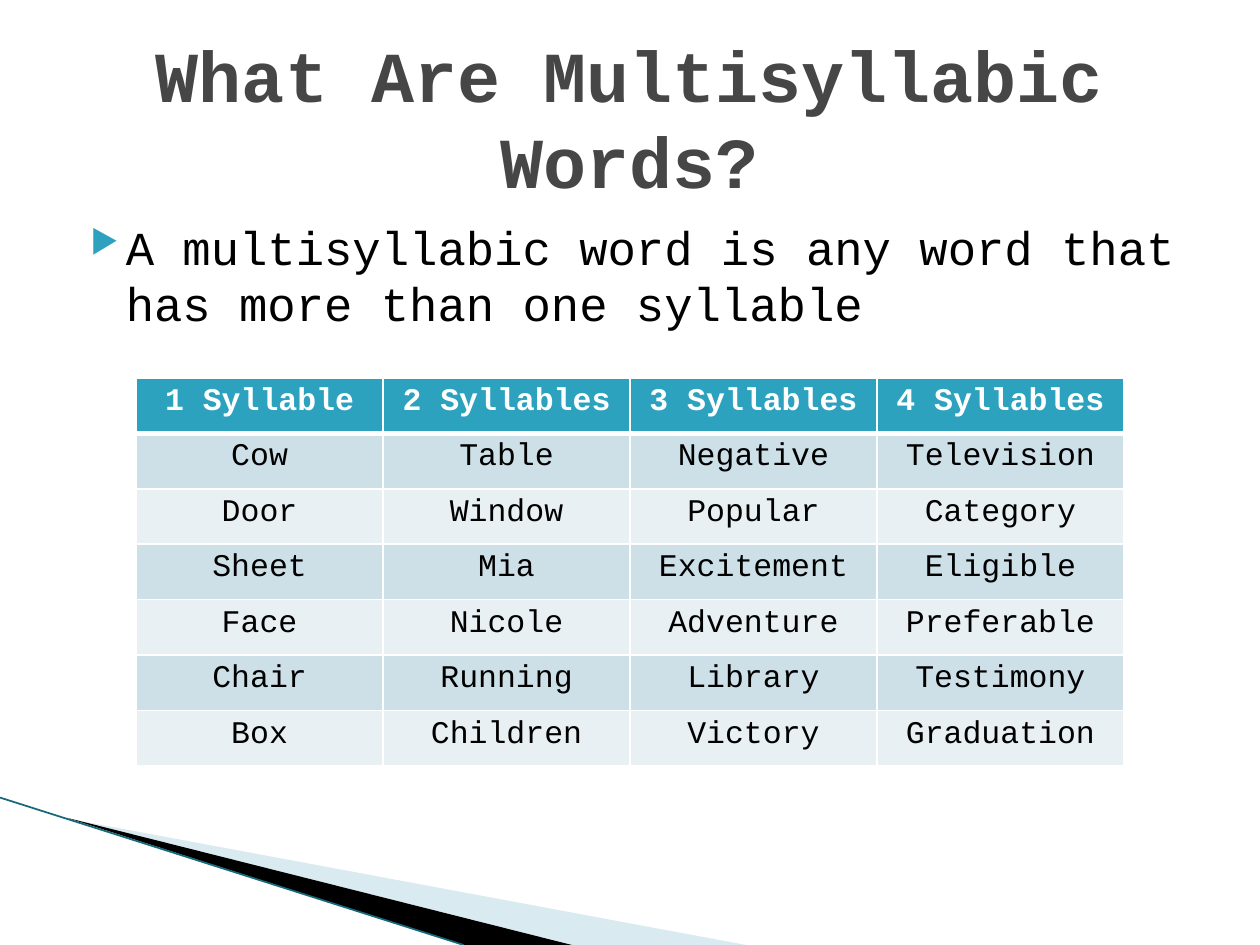
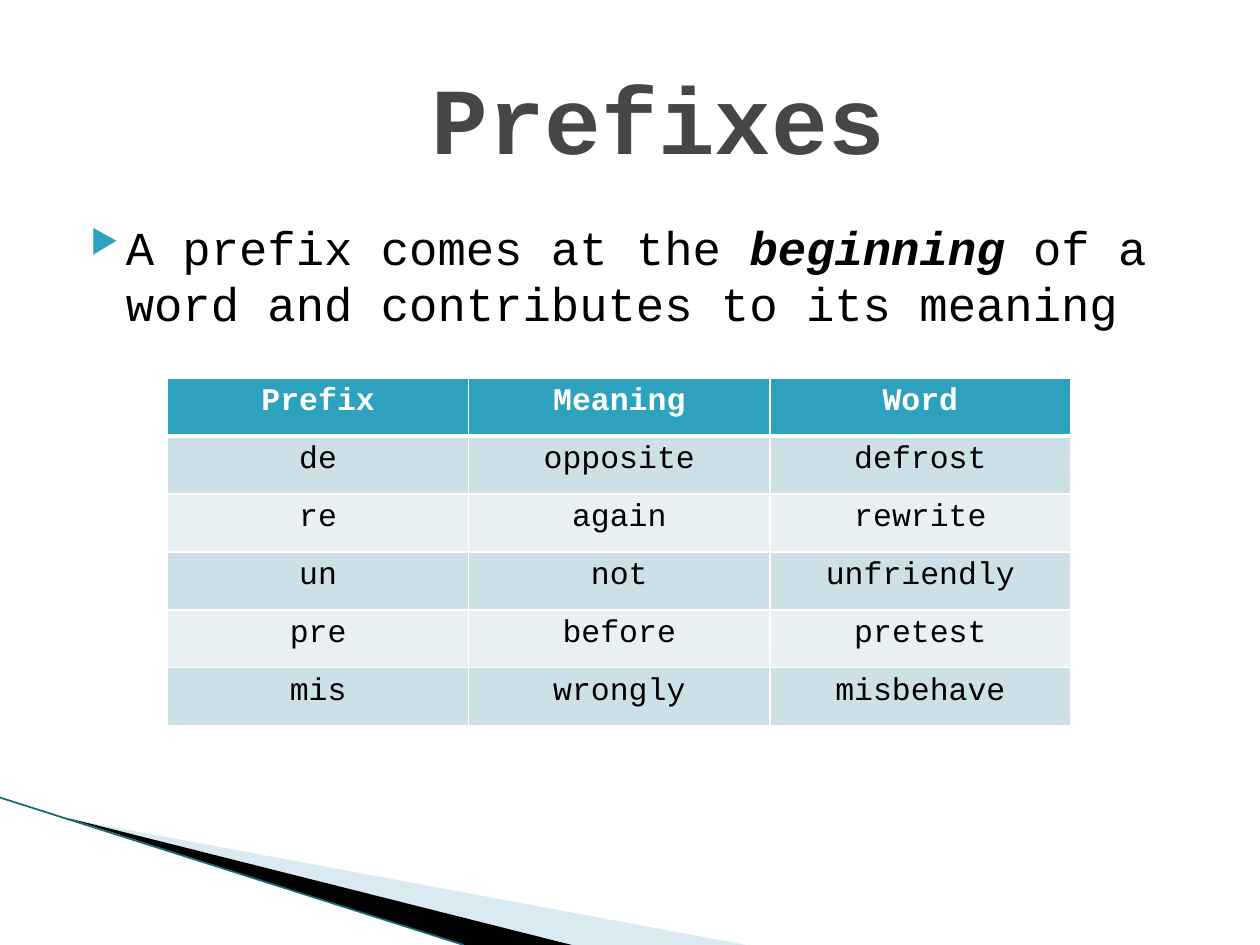
from lxml.etree import SubElement
from pptx import Presentation
from pptx.dml.color import RGBColor as Rgb
from pptx.enum.shapes import MSO_CONNECTOR as Connector
from pptx.enum.text import MSO_ANCHOR as Anchor, MSO_AUTO_SIZE as AutoSize, PP_ALIGN as Align
from pptx.oxml.ns import qn
from pptx.util import Inches, Pt

FONT = "Courier New"
COLORS = {
    "title": "464646",
    "text": "000000",
    "white": "FFFFFF",
    "accent": "2DA2BF",
    "odd_row": "CDE0E8",
    "even_row": "E8F0F4",
    "pale_wedge": "A0CBDC",
    "dark_wedge": "000000",
    "edge": "16697A",
}
TITLE_ONLY = 5
TABLE_TOP = 3

SYLLABLES = [
    ["1 Syllable", "2 Syllables", "3 Syllables", "4 Syllables"],
    ["Cow", "Table", "Negative", "Television"],
    ["Door", "Window", "Popular", "Category"],
    ["Sheet", "Mia", "Excitement", "Eligible"],
    ["Face", "Nicole", "Adventure", "Preferable"],
    ["Chair", "Running", "Library", "Testimony"],
    ["Box", "Children", "Victory", "Graduation"],
]
PREFIXES = [
    ["Prefix", "Meaning", "Word"],
    ["de", "opposite", "defrost"],
    ["re", "again", "rewrite"],
    ["un", "not", "unfriendly"],
    ["pre", "before", "pretest"],
    ["mis", "wrongly", "misbehave"],
]


def color(name):
    return Rgb.from_string(COLORS[name])


def add_text(para, text, size=18, ink="text", bold=False, italic=False, align=None):
    if align is not None:
        para.alignment = align
    span = para.add_run()
    span.text = text
    font = span.font
    font.name, font.size = FONT, Pt(size)
    font.bold, font.italic = bold, italic
    font.color.rgb = color(ink)


def add_wedge(page, points, ink, opacity=100):
    start, *rest = [(Inches(x), Inches(y)) for x, y in points]
    builder = page.shapes.build_freeform(*start)
    builder.add_line_segments(rest, close=True)
    wedge = builder.convert_to_shape()
    wedge.shadow.inherit = False
    wedge.line.fill.background()
    wedge.fill.solid()
    wedge.fill.fore_color.rgb = color(ink)
    if opacity < 100:
        fill_color = wedge.fill._xPr.find(".//" + qn("a:srgbClr"))
        SubElement(fill_color, qn("a:alpha"), val=str(opacity * 1000))


def add_corner_band(page):
    add_wedge(page, [(0.55, 6.5), (5.92, 7.5), (4.55, 7.5)], "pale_wedge", opacity=40)
    add_wedge(page, [(0.53, 6.49), (4.54, 7.5), (3.68, 7.5)], "dark_wedge")
    edge = page.shapes.add_connector(
        Connector.STRAIGHT, Inches(0), Inches(6.33), Inches(3.68), Inches(7.5)
    )
    edge.line.color.rgb = color("edge")
    edge.line.width = Pt(1)
    SubElement(edge._element.spPr, qn("a:effectLst"))


def add_title(page, text, size):
    title = page.shapes.title
    title.left, title.top = Inches(0.5), Inches(0.3)
    title.width, title.height = Inches(9), Inches(1.25)
    frame = title.text_frame
    frame.word_wrap = True
    frame.auto_size = AutoSize.NONE
    frame.vertical_anchor = Anchor.MIDDLE
    add_text(frame.paragraphs[0], text, size=size, ink="title", bold=True, align=Align.CENTER)


def add_bullet(para):
    props = para._p.get_or_add_pPr()
    props.set("marL", str(Inches(0.4)))
    props.set("indent", str(Inches(-0.28)))
    bullet_color = SubElement(props, qn("a:buClr"))
    SubElement(bullet_color, qn("a:srgbClr"), val=COLORS["accent"])
    SubElement(props, qn("a:buSzPct"), val="68000")
    SubElement(props, qn("a:buChar"), char="▶")


def add_definition(page, spans):
    box = page.shapes.add_textbox(Inches(0.5), Inches(1.68), Inches(9), Inches(1.1))
    box.text_frame.word_wrap = True
    para = box.text_frame.paragraphs[0]
    add_bullet(para)
    for text, strong in spans:
        add_text(para, text, size=27, bold=strong, italic=strong)


def set_borders(cell, **widths):
    props = cell._tc.get_or_add_tcPr()
    for side in "LRTB":
        width = Pt(widths.get(side, 1))
        border = SubElement(props, qn(f"a:ln{side}"), w=str(width))
        fill = SubElement(border, qn("a:solidFill"))
        SubElement(fill, qn("a:srgbClr"), val=COLORS["white"])


def format_cell(cell, text, row):
    header = row == 0
    if header:
        set_borders(cell, B=3)
        fill_name = "accent"
    else:
        set_borders(cell, T=3 if row == 1 else 1)
        fill_name = "odd_row" if row % 2 else "even_row"
    cell.fill.solid()
    cell.fill.fore_color.rgb = color(fill_name)
    add_text(
        cell.text_frame.paragraphs[0],
        text,
        ink="white" if header else "text",
        bold=header,
        align=Align.CENTER,
    )


def add_word_table(page, rows, left, column_width, row_height):
    row_count, column_count = len(rows), len(rows[0])
    table = page.shapes.add_table(
        row_count,
        column_count,
        Inches(left),
        Inches(TABLE_TOP),
        Inches(column_width * column_count),
        Inches(row_height * row_count),
    ).table
    for column in table.columns:
        column.width = Inches(column_width)
    for row, words in enumerate(rows):
        table.rows[row].height = Inches(row_height)
        for column, word in enumerate(words):
            format_cell(table.cell(row, column), word, row)


def add_page(deck, title, title_size, definition):
    page = deck.slides.add_slide(deck.slide_layouts[TITLE_ONLY])
    add_corner_band(page)
    add_title(page, title, title_size)
    add_definition(page, definition)
    return page


def main():
    deck = Presentation()
    deck.slide_width, deck.slide_height = Inches(10), Inches(7.5)

    page = add_page(
        deck,
        "What Are Multisyllabic Words?",
        41,
        [("A multisyllabic word is any word that has more than one syllable", False)],
    )
    add_word_table(page, SYLLABLES, left=1.08, column_width=1.96, row_height=0.44)

    page = add_page(
        deck,
        " Prefixes",
        54,
        [
            ("A prefix comes at the ", False),
            ("beginning", True),
            (" of a word and contributes to its meaning", False),
        ],
    )
    add_word_table(page, PREFIXES, left=1.33, column_width=2.39, row_height=0.46)

    deck.save("out.pptx")


if __name__ == "__main__":
    main()
